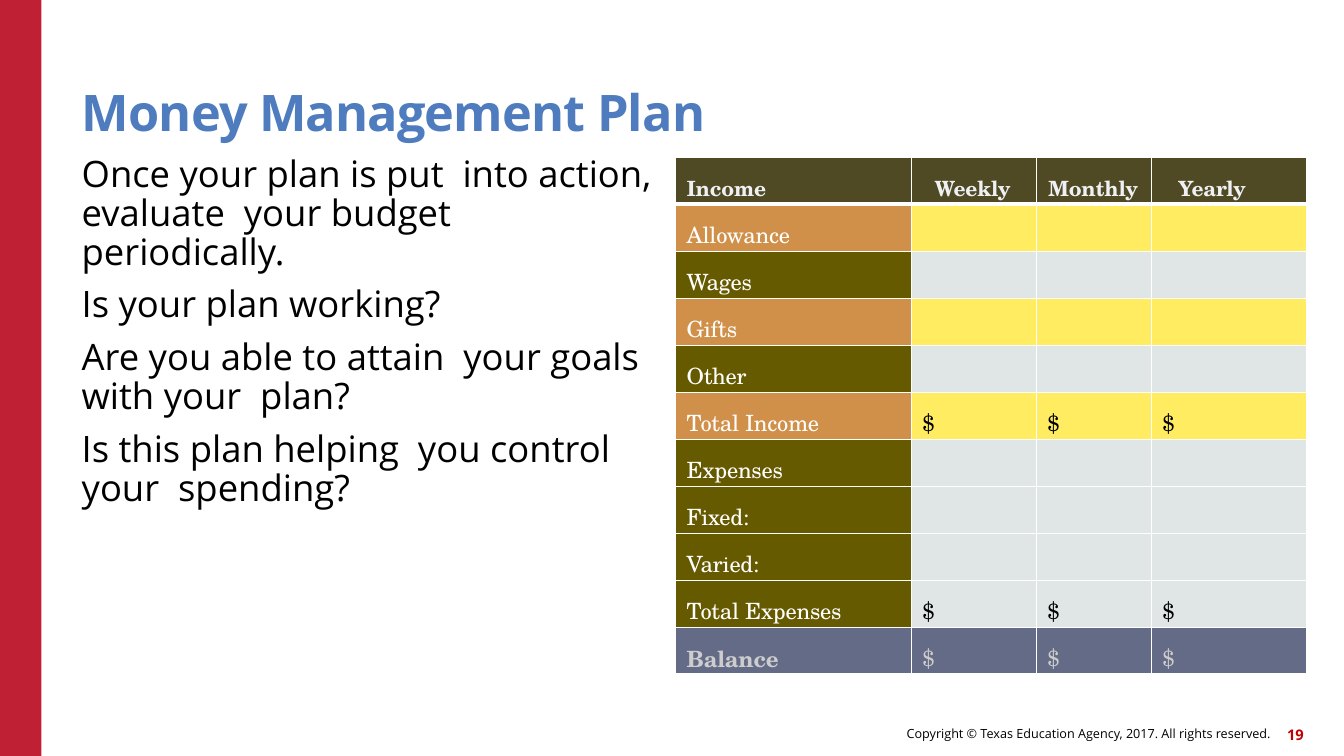
from dataclasses import dataclass
from lxml.etree import SubElement
from pptx import Presentation
from pptx.dml.color import RGBColor as RGB
from pptx.enum.shapes import MSO_SHAPE as SHAPE
from pptx.enum.text import MSO_ANCHOR as ANCHOR, PP_ALIGN as ALIGN
from pptx.oxml import parse_xml
from pptx.oxml.ns import nsdecls, qn
from pptx.util import Inches, Pt

WIDTH, HEIGHT = Inches(13.33), Inches(7.5)


@dataclass(frozen=True)
class Theme:
    sans: str = "Open Sans"
    serif: str = "TeX Gyre Schola"
    white: str = "FFFFFF"
    black: str = "000000"
    bar: str = "C02033"
    title: str = "4E7CBE"
    number: str = "C00000"
    header: str = "332D00"
    header_text: str = "EFF0F3"
    orange: str = "D19049"
    olive: str = "665A00"
    yellow: str = "FFE947"
    grey: str = "DBE3E3"
    balance: str = "646B86"
    balance_text: str = "CDCDCD"
    title_size: float = 36
    body_size: float = 26
    cell_size: float = 16
    header_size: float = 15
    footer_size: float = 9
    number_size: float = 10.5


T = Theme()

QUESTIONS = [
    "Once your plan is put  into action, evaluate  your budget  periodically.",
    "Is your plan working?",
    "Are you able to attain  your goals with your  plan?",
    "Is this plan helping  you control your  spending?",
]
HEADINGS = ["Income", "Weekly", "Monthly", "Yearly"]
HEADING_INDENTS = [0.11, 0.23, 0.12, 0.27]
CATEGORIES = ["Allowance", "Wages", "Gifts", "Other", "Total Income", "Expenses",
              "Fixed:", "Varied:", "Total Expenses", "Balance"]
HIGHLIGHTED = {"Allowance", "Gifts", "Total Income"}
TOTALS = {"Total Income", "Total Expenses", "Balance"}
COLUMN_SHARES = [17.55, 9.3, 8.55, 11.55, 1.13]
ROW_SHARE = 6.22


def across(share):
    return round(WIDTH * share / 100)


def down(share):
    return round(HEIGHT * share / 100)


def place(x, y, w, h):
    return across(x), down(y), across(w), down(h)


def apply(target, values):
    for name, value in values.items():
        setattr(target, name, value)


def write(p, text, font, size, color, bold=False, tracking=0):
    r = p.add_run()
    r.text = text
    apply(r.font, {"name": font, "size": Pt(size), "bold": bold})
    r.font.color.rgb = RGB.from_string(color)
    if tracking:
        r._r.get_or_add_rPr().set("spc", str(round(tracking * 100)))


def add_text(s, box, texts, size, color, bold=False, tracking=0,
             anchor=ANCHOR.TOP, align=ALIGN.LEFT, spacing=1.0, gap=0):
    tf = s.shapes.add_textbox(*place(*box)).text_frame
    apply(tf, {"word_wrap": True, "vertical_anchor": anchor, "margin_left": 0,
               "margin_top": 0, "margin_right": 0, "margin_bottom": 0})
    for i, text in enumerate(texts):
        p = tf.add_paragraph() if i else tf.paragraphs[0]
        apply(p, {"alignment": align, "line_spacing": spacing,
                  "space_before": Pt(gap if i else 0)})
        write(p, text, T.sans, size, color, bold, tracking)


def add_bar(s, box, color):
    sp = s.shapes.add_shape(SHAPE.RECTANGLE, *place(*box))
    sp.shadow.inherit = False
    sp.fill.solid()
    sp.fill.fore_color.rgb = RGB.from_string(color)
    sp.line.fill.background()


def set_borders(cell, widths):
    tc_pr = cell._tc.get_or_add_tcPr()
    for i, (side, width) in enumerate(widths.items()):
        tc_pr.insert(i, parse_xml(
            f'<a:ln{side} {nsdecls("a")} w="{Pt(width)}"><a:solidFill>'
            f'<a:srgbClr val="{T.white}"/></a:solidFill></a:ln{side}>'))


def style_cell(cell, color, alpha=100, top=1, bottom=1, indent=0.11):
    apply(cell, {"margin_left": Inches(indent), "margin_top": Inches(0.14),
                 "margin_right": 0, "margin_bottom": 0})
    cell.fill.solid()
    cell.fill.fore_color.rgb = RGB.from_string(color)
    if alpha < 100:
        shade = cell._tc.tcPr.find(".//" + qn("a:srgbClr"))
        SubElement(shade, qn("a:alpha")).set("val", str(alpha * 1000))
    set_borders(cell, {"L": 1, "R": 1, "T": top, "B": bottom})


def fill_header(table):
    for c, (text, indent) in enumerate(zip(HEADINGS, HEADING_INDENTS)):
        cell = table.cell(0, c)
        style_cell(cell, T.header, 86, bottom=3, indent=indent)
        write(cell.text_frame.paragraphs[0], text, T.serif, T.header_size,
              T.header_text, True, -0.1)


def fill_category(table, row, name):
    last = name == "Balance"
    if last:
        label, value, alpha = T.balance, T.balance, 100
    elif name in HIGHLIGHTED:
        label, value, alpha = T.orange, T.yellow, 86
    else:
        label, value, alpha = T.olive, T.grey, 86
    top = 3 if row == 1 else 1
    for c in range(len(HEADINGS)):
        cell = table.cell(row, c)
        p = cell.text_frame.paragraphs[0]
        if c == 0:
            style_cell(cell, label, top=top)
            write(p, name, T.serif, T.cell_size,
                  T.balance_text if last else T.white, last, -0.1)
        else:
            style_cell(cell, value, alpha, top=top)
            if name in TOTALS:
                write(p, "$", T.serif, T.cell_size,
                      T.balance_text if last else T.black)


def add_budget(s, x, y):
    rows = len(CATEGORIES) + 1
    box = place(x, y, sum(COLUMN_SHARES), ROW_SHARE * rows)
    table = s.shapes.add_table(rows, len(COLUMN_SHARES), *box).table
    apply(table, {"first_row": False, "horz_banding": False})
    for column, share in zip(table.columns, COLUMN_SHARES):
        column.width = across(share)
    for r, row in enumerate(table.rows):
        row.height = down(ROW_SHARE)
        margin = table.cell(r, len(HEADINGS))
        margin.fill.background()
        set_borders(margin, {"L": 1, "R": 1, "T": 1, "B": 1})
    fill_header(table)
    for r, name in enumerate(CATEGORIES, 1):
        fill_category(table, r, name)


def main():
    prs = Presentation()
    apply(prs, {"slide_width": WIDTH, "slide_height": HEIGHT})
    s = prs.slides.add_slide(prs.slide_layouts[6])
    add_bar(s, (0, 0, 3.08, 100), T.bar)
    add_text(s, (46.06, 94.93, 48.46, 4.27),
             ["Copyright © Texas Education Agency, 2017. All rights reserved."],
             T.footer_size, T.black, anchor=ANCHOR.MIDDLE, align=ALIGN.RIGHT)
    add_text(s, (93.85, 95.07, 3.15, 4.27), ["19"], T.number_size, T.number,
             bold=True, anchor=ANCHOR.MIDDLE, align=ALIGN.RIGHT)
    add_text(s, (6.08, 6, 82.5, 12.8), ["Money Management Plan"], T.title_size,
             T.title, bold=True, tracking=-0.6, anchor=ANCHOR.BOTTOM, spacing=0.9)
    add_text(s, (6.08, 20.67, 43.73, 69.07), QUESTIONS, T.body_size, T.black,
             spacing=0.89, gap=10)
    add_budget(s, 50.26, 20.8)
    prs.save("out.pptx")


if __name__ == "__main__":
    main()
